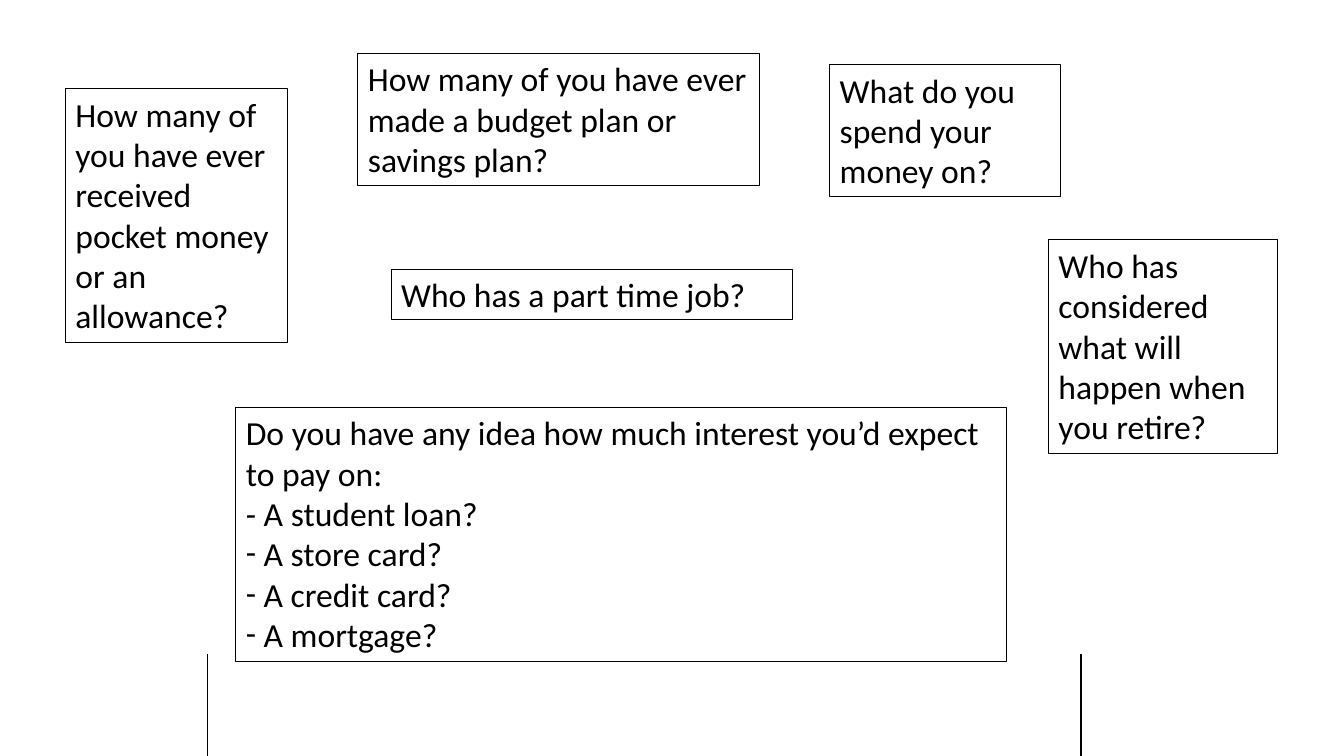
from lxml.etree import SubElement
from pptx import Presentation
from pptx.dml.color import RGBColor
from pptx.enum.shapes import MSO_CONNECTOR
from pptx.enum.text import MSO_AUTO_SIZE
from pptx.oxml.ns import qn
from pptx.util import Emu, Pt

PX = 9144
COLORS = {"paper": "FFFFFF", "ink": "000000"}
FONT = {"name": "Calibri", "size": Pt(24)}
QUESTIONS = [
    ((65, 88, 220, 252), "How many of you have ever received pocket money or an allowance?"),
    ((355, 53, 398, 131), "How many of you have ever made a budget plan or savings plan?"),
    ((823, 64, 229, 131), "What do you spend your money on?"),
    ((388, 267, 398, 50), "Who has a part time job?"),
    ((1040, 238, 227, 212), "Who has considered what will happen when you retire?"),
]
INTEREST = ["Do you have any idea how much interest you’d expect to pay on:", "- A student loan?"]
DEBTS = [" A store card?", " A credit card?", " A mortgage?"]


class Board:
    """Draws outlined question boxes and lines on one slide."""

    def __init__(self, slide):
        self.slide = slide
        fill = slide.background.fill
        fill.solid()
        fill.fore_color.rgb = self.color("paper")

    def color(self, name):
        return RGBColor.from_string(COLORS[name])

    def outline(self, line, width):
        line.color.rgb = self.color("ink")
        line.width = Pt(width)

    def line(self, *ends):
        cxn = self.slide.shapes.add_connector(MSO_CONNECTOR.STRAIGHT, *(Emu(v * PX) for v in ends))
        self.outline(cxn.line, 1)
        SubElement(cxn._element.spPr, qn("a:effectLst"))

    def box(self, place, lines, bullets=()):
        sp = self.slide.shapes.add_textbox(*(Emu(v * PX) for v in place))
        self.outline(sp.line, 0.75)
        tf = sp.text_frame
        tf.word_wrap = True
        tf.auto_size = MSO_AUTO_SIZE.SHAPE_TO_FIT_TEXT
        for i, text in enumerate([*lines, *bullets]):
            p = tf.add_paragraph() if i else tf.paragraphs[0]
            if i >= len(lines):
                self.bullet(p)
            r = p.add_run()
            r.text = text
            for key, value in FONT.items():
                setattr(r.font, key, value)
            r.font.color.rgb = self.color("ink")

    def bullet(self, p):
        pPr = p._p.get_or_add_pPr()
        pPr.set("marL", "0")
        pPr.set("indent", "0")
        SubElement(pPr, qn("a:buFont"), typeface=FONT["name"])
        SubElement(pPr, qn("a:buChar"), char="-")


def main():
    prs = Presentation()
    prs.slide_width, prs.slide_height = Emu(1333 * PX), Emu(750 * PX)
    board = Board(prs.slides.add_slide(prs.slide_layouts[6]))
    for x in (1072, 206):
        board.line(x, 649, x, 750)
    for place, question in QUESTIONS:
        board.box(place, [question])
    board.box((234, 404, 764, 252), INTEREST, DEBTS)
    prs.save("out.pptx")


if __name__ == "__main__":
    main()
